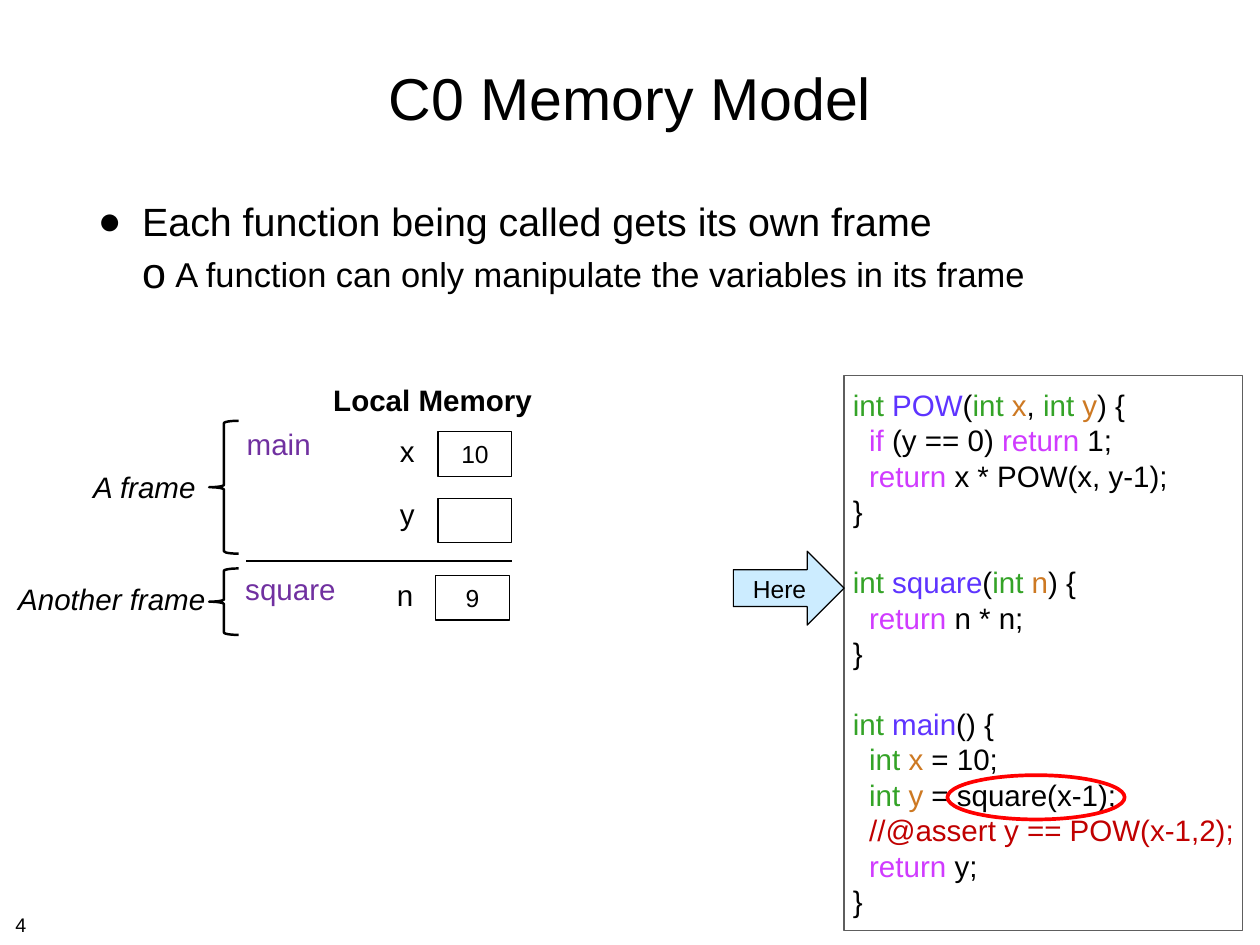
from lxml import etree
from pptx import Presentation
from pptx.dml.color import RGBColor
from pptx.enum.shapes import MSO_CONNECTOR, MSO_SHAPE
from pptx.enum.text import MSO_ANCHOR, PP_ALIGN
from pptx.oxml.ns import qn
from pptx.util import Pt

RECTANGLE, ELLIPSE = MSO_SHAPE.RECTANGLE, MSO_SHAPE.OVAL
RIGHT_ARROW, LEFT_BRACE = MSO_SHAPE.RIGHT_ARROW, MSO_SHAPE.LEFT_BRACE
STRAIGHT = MSO_CONNECTOR.STRAIGHT
TOP, MIDDLE = MSO_ANCHOR.TOP, MSO_ANCHOR.MIDDLE
LEFT, CENTER, RIGHT = PP_ALIGN.LEFT, PP_ALIGN.CENTER, PP_ALIGN.RIGHT

BLACK = RGBColor(0x00, 0x00, 0x00)
GRAY = RGBColor(0x5E, 0x5E, 0x5E)
RED = RGBColor(0xFF, 0x00, 0x00)
PALE_BLUE = RGBColor(0xCC, 0xEC, 0xFF)
FRAME_PURPLE = RGBColor(0x70, 0x30, 0xA0)
TYPE = RGBColor(0x34, 0xA3, 0x27)
FUNCTION = RGBColor(0x5E, 0x34, 0xFF)
VARIABLE = RGBColor(0xCD, 0x79, 0x23)
KEYWORD = RGBColor(0xD0, 0x3B, 0xFF)
CONTRACT = RGBColor(0xC0, 0x00, 0x00)

deck = Presentation()
deck.slide_width, deck.slide_height = Pt(1024), Pt(768)
page = deck.slides.add_slide(deck.slide_layouts[6])


def add_text(text, place, size, color=BLACK, align=CENTER, anchor=MIDDLE, wrap=False, inset=4.5):
    box = page.shapes.add_textbox(*map(Pt, place))
    frame = box.text_frame
    frame.word_wrap = wrap
    frame.vertical_anchor = anchor
    frame.margin_left = frame.margin_right = Pt(inset)
    frame.margin_top = frame.margin_bottom = Pt(min(inset, 4.5))
    frame.text = text
    for para in frame.paragraphs:
        para.alignment = align
        para.font.name, para.font.size = "Arial", Pt(size)
        para.font.color.rgb = color
    return frame


def add_outline(kind, place, line_color, line_width, text="", fill=None):
    shape = page.shapes.add_shape(kind, *map(Pt, place))
    shape.shadow.inherit = False
    if fill is None:
        shape.fill.background()
    else:
        shape.fill.solid()
        shape.fill.fore_color.rgb = fill
    shape.line.color.rgb, shape.line.width = line_color, Pt(line_width)
    frame = shape.text_frame
    frame.margin_left = frame.margin_right = frame.margin_top = frame.margin_bottom = Pt(3.6)
    frame.vertical_anchor = MIDDLE
    if text:
        frame.text = text
        para = frame.paragraphs[0]
        para.alignment = CENTER
        para.font.name, para.font.size = "Arial", Pt(20)
        para.font.color.rgb = BLACK
    return shape


add_text("C0 Memory Model", (75, 20, 874, 118), 48, wrap=True)

points = add_text(
    "Each function being called gets its own frame\n"
    "A function can only manipulate the variables in its frame",
    (75, 156, 874, 228), 32, align=LEFT, anchor=TOP, wrap=True)
bullets = [("●", 32, 36, 36, 8, 100), ("o", 28, 63, 27, 7, 125)]
for para, (mark, size, margin, hanging, before, scale) in zip(points.paragraphs, bullets):
    para.font.size, para.space_before = Pt(size), Pt(before)
    props = para._p.get_or_add_pPr()
    props.set("marL", str(Pt(margin)))
    props.set("indent", str(-Pt(hanging)))
    bullet_size = etree.Element(qn("a:buSzPct"), val=str(scale * 1000))
    bullet_font = etree.Element(qn("a:buFont"), typeface="Arial")
    bullet_mark = etree.Element(qn("a:buChar"), char=mark)
    defaults = props.find(qn("a:defRPr"))
    for item in (bullet_size, bullet_font, bullet_mark):
        defaults.addprevious(item)

add_text("Local Memory", (266, 306, 171, 37), 24).paragraphs[0].font.bold = True

code_lines = [
    (0, 0, [("int ", TYPE), ("POW", FUNCTION), ("(", BLACK), ("int ", TYPE), ("x", VARIABLE),
            (", ", BLACK), ("int ", TYPE), ("y", VARIABLE), (") {", BLACK)]),
    (1, 0, [("if ", KEYWORD), ("(y == 0) ", BLACK), ("return", KEYWORD), (" 1;", BLACK)]),
    (1, 0, [("return", KEYWORD), (" x * POW(x, y-1);", BLACK)]),
    (0, 0, [("}", BLACK)]),
    (0, 1, [("int ", TYPE), ("square", FUNCTION), ("(", BLACK), ("int ", TYPE),
            ("n", VARIABLE), (") {", BLACK)]),
    (1, 0, [("return", KEYWORD), (" n * n;", BLACK)]),
    (0, 0, [("}", BLACK)]),
    (0, 1, [("int ", TYPE), ("main", FUNCTION), ("() {", BLACK)]),
    (1, 0, [("int ", TYPE), ("x", VARIABLE), (" = 10;", BLACK)]),
    (1, 0, [("int ", TYPE), ("y", VARIABLE), (" = square(x-1);", BLACK)]),
    (1, 0, [("//@assert y == POW(x-1,2);", CONTRACT)]),
    (1, 0, [("return", KEYWORD), (" y;", BLACK)]),
    (0, 0, [("}", BLACK)]),
]
LINE_HEIGHT = 28.8
code = add_outline(RECTANGLE, (686, 305, 324, 451), GRAY, 1).text_frame
code.margin_left = code.margin_right = Pt(7.2)
code.word_wrap = True
for number, (level, gap, spans) in enumerate(code_lines):
    para = code.add_paragraph() if number else code.paragraphs[0]
    para.alignment = LEFT
    para.font.name, para.font.size = "Arial", Pt(24)
    para.line_spacing, para.space_before = Pt(LINE_HEIGHT), Pt(gap * LINE_HEIGHT)
    para._p.get_or_add_pPr().set("marL", str(Pt(level * 13.3)))
    for text, color in spans:
        span = para.add_run()
        span.text = text
        span.font.color.rgb = color

variables = [("x", 320, 348, 356, "10", 351), ("y", 320, 399, 356, "", 405),
             ("n", 318, 465, 354, "9", 468)]
for name, name_left, name_top, cell_left, value, cell_top in variables:
    add_text(name, (name_left, name_top, 22, 37), 24)
    add_outline(RECTANGLE, (cell_left, cell_top, 60, 36), BLACK, 1, value)

add_outline(RIGHT_ARROW, (596, 448, 90, 60), BLACK, 1, "Here", PALE_BLUE)

for name, place in [("main", (193, 342, 67, 37)), ("square", (191.5, 459.5, 89, 37))]:
    add_text(name, place, 24, FRAME_PURPLE, anchor=TOP, inset=7.2)

divider = page.shapes.add_connector(STRAIGHT, Pt(200), Pt(456), Pt(416), Pt(456))
divider.line.color.rgb, divider.line.width = BLACK, Pt(2)
etree.SubElement(divider._element.spPr, qn("a:effectLst"))

frames = [("A frame", (68, 377, 98, 36), 342, 108), ("Another frame", (0, 468, 174, 36), 462, 54)]
for label, place, brace_top, brace_height in frames:
    note = add_text(label, place, 24, align=RIGHT, anchor=TOP, inset=7.2)
    note.paragraphs[0].font.italic = True
    brace = add_outline(LEFT_BRACE, (170, brace_top, 24, brace_height), BLACK, 2)
    brace.adjustments[0], brace.adjustments[1] = 0.08, 0.5

add_outline(ELLIPSE, (770, 630, 144, 36), RED, 3)
add_text("4", (8, 737, 27, 25), 16, align=LEFT, anchor=TOP)

deck.save("out.pptx")
